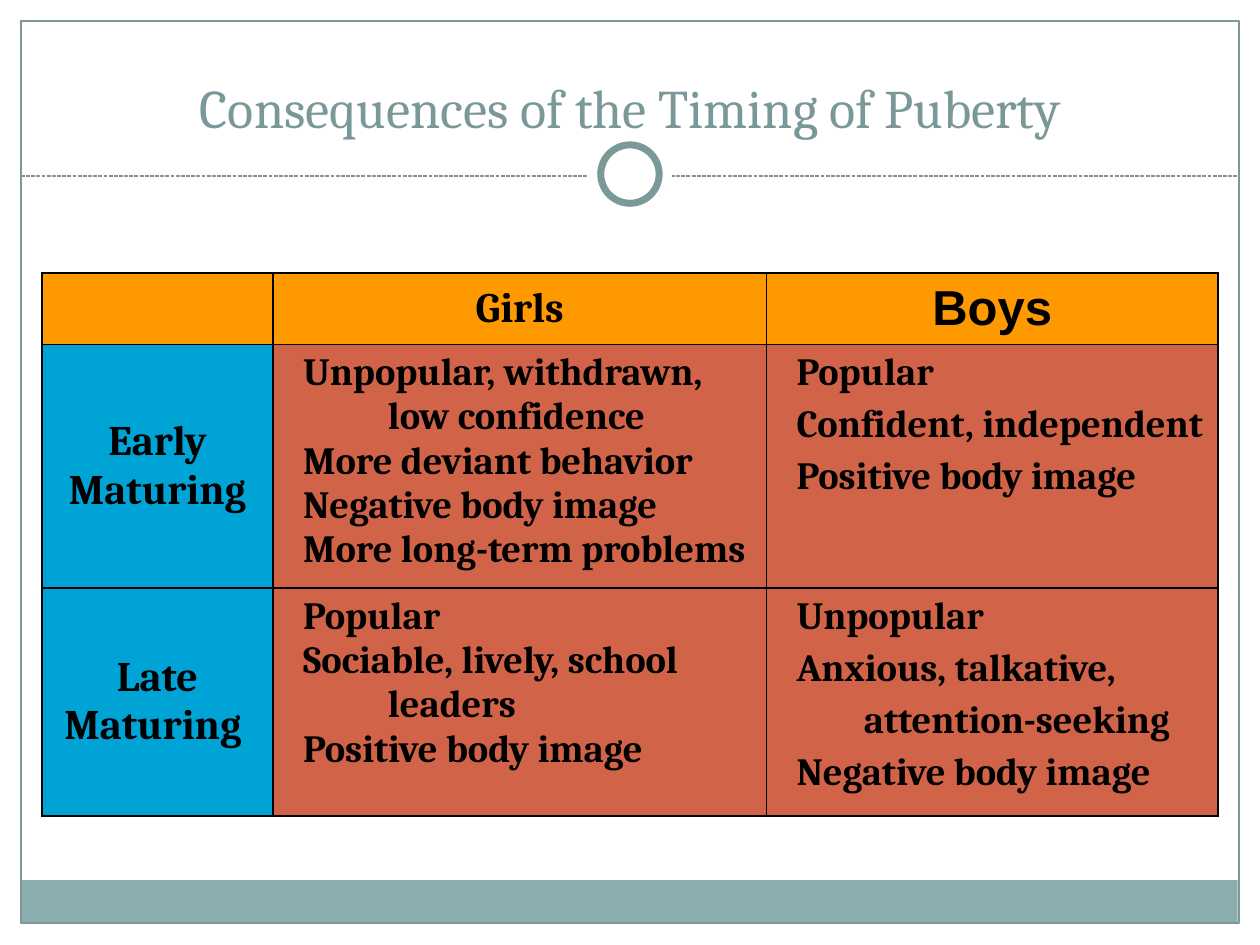
import pptx
import pptx.util
import pptx.dml.color
import pptx.enum.dml
import pptx.enum.shapes
import pptx.enum.text
import pptx.oxml
import pptx.oxml.ns
from lxml import etree

Pt = pptx.util.Pt
RGB = pptx.dml.color.RGBColor
Kind = pptx.enum.shapes.MSO_SHAPE
Align = pptx.enum.text.PP_ALIGN
Anchor = pptx.enum.text.MSO_ANCHOR

TEAL = RGB(0x7C, 0x99, 0x9A)
TITLE = RGB(0x7B, 0x98, 0x99)
BAND = RGB(0x8C, 0xAD, 0xAE)
WHITE = RGB(255, 255, 255)
BLACK = RGB(0, 0, 0)
ORANGE = RGB(0xFF, 0x99, 0x00)
BLUE = RGB(0x00, 0xA3, 0xD6)
RUST = RGB(0xD1, 0x63, 0x49)

COLS = (132, 282, 258)
ROWS = (38.2, 133.8, 130.4)
GIRLS = (
    ("Unpopular, withdrawn,", "\tlow confidence", "More deviant behavior",
     "Negative body image", "More long-term problems"),
    ("Popular", "Sociable, lively, school", "\tleaders", "Positive body image"),
)
BOYS = (
    ("Popular", "Confident, independent", "Positive body image"),
    ("Unpopular", "Anxious, talkative,", "\tattention-seeking",
     "Negative body image"),
)


def write(para, text, size=24, font="Cambria", color=BLACK, bold=True,
          align=Align.CENTER, gap=0, indent=0):
    para.alignment = align
    para.space_before = Pt(gap)
    if indent:
        props = para._p.get_or_add_pPr()
        props.set("marL", str(Pt(indent)))
        props.set("indent", "0")
    run = para.add_run()
    run.text = text
    run.font.size = Pt(size)
    run.font.name = font
    run.font.bold = bold
    run.font.color.rgb = color


def shape(slide, kind, box, fill=None, line=None, width=0.75):
    item = slide.shapes.add_shape(kind, *map(Pt, box))
    item.shadow.inherit = False
    if fill is None:
        item.fill.background()
    else:
        item.fill.solid()
        item.fill.fore_color.rgb = fill
    if line is None:
        item.line.fill.background()
    else:
        item.line.color.rgb = line
        item.line.width = Pt(width)


def rule(slide, left, right, top):
    line = slide.shapes.add_connector(
        pptx.enum.shapes.MSO_CONNECTOR.STRAIGHT,
        Pt(left), Pt(top), Pt(right), Pt(top))
    line.line.color.rgb = TEAL
    line.line.width = Pt(0.75)
    line.line.dash_style = pptx.enum.dml.MSO_LINE.SQUARE_DOT
    etree.SubElement(line._element.spPr, pptx.oxml.ns.qn("a:effectLst"))


def title(slide, text):
    box = slide.shapes.add_textbox(Pt(78), Pt(24), Pt(564), Pt(59))
    frame = box.text_frame
    frame.word_wrap = True
    frame.vertical_anchor = Anchor.BOTTOM
    write(frame.paragraphs[0], text, size=31, color=TITLE, bold=False)


def paint(cell, fill):
    cell.fill.solid()
    cell.fill.fore_color.rgb = fill
    props = cell._tc.get_or_add_tcPr()
    for spot, side in enumerate("LRTB"):
        props.insert(spot, pptx.oxml.parse_xml(
            f'<a:ln{side} {pptx.oxml.ns.nsdecls("a")} w="{Pt(1)}">'
            f'<a:solidFill><a:srgbClr val="{BLACK}"/></a:solidFill>'
            f'</a:ln{side}>'))


def label(cell, text, fill, **style):
    paint(cell, fill)
    cell.vertical_anchor = Anchor.MIDDLE
    write(cell.text_frame.paragraphs[0], text, **style)


def traits(cell, lines, gap, deep):
    # A leading tab marks the continuation of the line above
    paint(cell, RUST)
    cell.margin_right = Pt(3)
    frame = cell.text_frame
    for num, text in enumerate(lines):
        para = frame.add_paragraph() if num else frame.paragraphs[0]
        write(para, text.strip(), size=22, align=Align.LEFT,
              gap=gap if num else 0,
              indent=deep if text.startswith("\t") else 10)


def grid(slide):
    table = slide.shapes.add_table(
        len(ROWS), len(COLS), Pt(24), Pt(156),
        Pt(sum(COLS)), Pt(sum(ROWS))).table
    for col, width in zip(table.columns, COLS):
        col.width = Pt(width)
    for row, height in zip(table.rows, ROWS):
        row.height = Pt(height)

    # Header row
    paint(table.cell(0, 0), ORANGE)
    label(table.cell(0, 1), "Girls", ORANGE)
    label(table.cell(0, 2), "Boys", ORANGE, size=28, font="Arial")

    # One row for each timing
    names = ("Early Maturing", "Late Maturing ")
    for row, (name, girls, boys) in enumerate(zip(names, GIRLS, BOYS), 1):
        label(table.cell(row, 0), name, BLUE)
        traits(table.cell(row, 1), girls, gap=0, deep=58.5)
        traits(table.cell(row, 2), boys, gap=4.4, deep=48.5)


def main():
    deck = pptx.Presentation()
    deck.slide_width, deck.slide_height = Pt(720), Pt(540)
    slide = deck.slides.add_slide(deck.slide_layouts[6])

    # Frame with bottom band
    shape(slide, Kind.RECTANGLE, (11.8, 503, 695.5, 24.5), fill=BAND)
    shape(slide, Kind.RECTANGLE, (12, 12, 696, 515.5), line=TEAL)

    # Dashed rule broken by a ring
    rule(slide, 12, 708, 100.6)
    shape(slide, Kind.OVAL, (336, 75.5, 48, 48), fill=WHITE)
    shape(slide, Kind.OVAL, (343.3, 82.8, 33.4, 33.4), fill=WHITE,
          line=TEAL, width=4)

    title(slide, "Consequences of the Timing of Puberty")
    grid(slide)
    deck.save("out.pptx")


if __name__ == "__main__":
    main()
